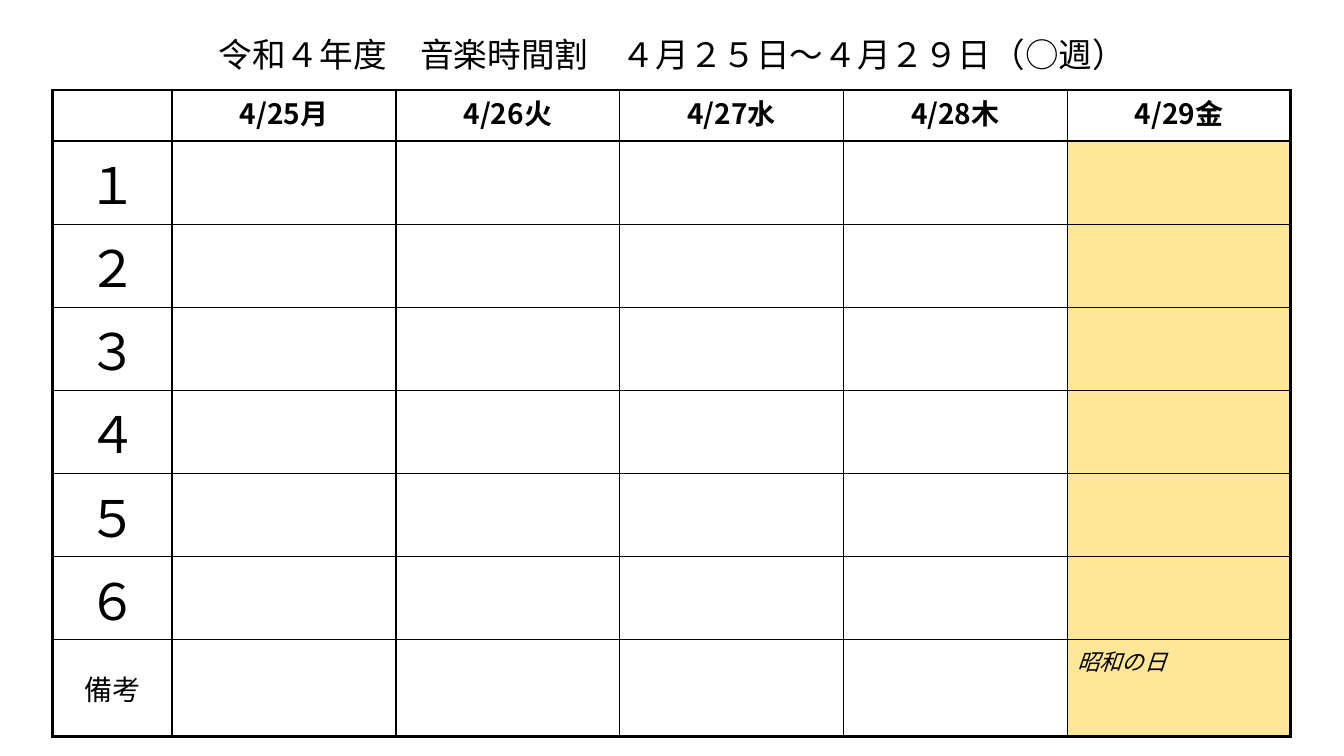
import lxml.etree
import pptx
import pptx.dml.color
import pptx.enum.text
import pptx.oxml.ns
import pptx.util

Pt = pptx.util.Pt
ALIGN = pptx.enum.text.PP_ALIGN
ANCHOR = pptx.enum.text.MSO_ANCHOR

FONT = "Noto Sans CJK JP"
BLACK = "000000"
HOLIDAY = "FFE699"
THIN, MEDIUM, THICK = 1, 1.5, 2.25

TITLE = "令和４年度　音楽時間割　４月２５日〜４月２９日（○週）"
DAYS = ["4/25月", "4/26火", "4/27水", "4/28木", "4/29金"]
PERIODS = ["１", "２", "３", "４", "５", "６"]
COLUMN_WIDTHS = [85.5] + [159.8] * len(DAYS)
ROW_HEIGHTS = [36.8] + [57.6] * len(PERIODS) + [69.2]
# Line weights from the outer left edge to the right, and from top to bottom
VERTICAL_LINES = [THICK, MEDIUM] + [THIN] * (len(DAYS) - 1) + [THICK]
HORIZONTAL_LINES = [THICK, MEDIUM] + [THIN] * (len(PERIODS) - 1) + [MEDIUM, THICK]


def colour(code):
    return pptx.dml.color.RGBColor.from_string(code)


def add_xml(parent, tag, **attributes):
    return lxml.etree.SubElement(parent, pptx.oxml.ns.qn(tag), attributes)


def write_text(frame, text, size, align=ALIGN.CENTER, bold=False, italic=False, spacing=None):
    para = frame.paragraphs[0]
    para.alignment = align
    if spacing is not None:
        para.line_spacing = spacing
    span = para.add_run()
    span.text = text
    font = span.font
    font.size, font.bold, font.italic = Pt(size), bold, italic
    font.color.rgb = colour(BLACK)
    font.name = FONT
    add_xml(span._r.get_or_add_rPr(), "a:ea", typeface=FONT)


def format_title(page):
    box = page.shapes.title
    box.left, box.top, box.width, box.height = Pt(14.4), Pt(21.6), Pt(931.7), Pt(35.3)
    frame = box.text_frame
    frame.auto_size = pptx.enum.text.MSO_AUTO_SIZE.NONE
    frame.vertical_anchor = ANCHOR.BOTTOM
    write_text(frame, TITLE, 24, spacing=0.9)


def draw_borders(cell, left, right, top, bottom):
    properties = cell._tc.get_or_add_tcPr()
    for side, weight in zip("LRTB", (left, right, top, bottom)):
        line = add_xml(properties, f"a:ln{side}", w=str(int(Pt(weight))))
        add_xml(add_xml(line, "a:solidFill"), "a:srgbClr", val=BLACK)


def add_grid(page):
    """Add the empty timetable with its borders and the shaded holiday column."""
    frame = page.shapes.add_table(
        len(ROW_HEIGHTS), len(COLUMN_WIDTHS),
        Pt(37.6), Pt(64.2), Pt(sum(COLUMN_WIDTHS)), Pt(sum(ROW_HEIGHTS)))
    table = frame.table
    table.first_row = table.horz_banding = False
    for column, width in zip(table.columns, COLUMN_WIDTHS):
        column.width = Pt(width)
    for r, height in enumerate(ROW_HEIGHTS):
        table.rows[r].height = Pt(height)
        for c in range(len(COLUMN_WIDTHS)):
            cell = table.cell(r, c)
            draw_borders(cell, *VERTICAL_LINES[c:c + 2], *HORIZONTAL_LINES[r:r + 2])
            if r > 0 and c == len(DAYS):
                cell.fill.solid()
                cell.fill.fore_color.rgb = colour(HOLIDAY)
            else:
                cell.fill.background()
    return table


def label_cell(cell, text, size, **text_format):
    cell.vertical_anchor = ANCHOR.MIDDLE
    write_text(cell.text_frame, text, size, **text_format)


def main():
    deck = pptx.Presentation()
    deck.slide_width, deck.slide_height = Pt(960), Pt(540)
    page = deck.slides.add_slide(deck.slide_layouts[5])
    format_title(page)

    table = add_grid(page)
    for c, day in enumerate(DAYS, start=1):
        label_cell(table.cell(0, c), day, 20, bold=True, spacing=Pt(24))
    for r, period in enumerate(PERIODS, start=1):
        label_cell(table.cell(r, 0), period, 36)
    notes_row = len(PERIODS) + 1
    label_cell(table.cell(notes_row, 0), "備考", 20)
    holiday = table.cell(notes_row, len(DAYS))
    write_text(holiday.text_frame, "昭和の日", 16, align=ALIGN.LEFT, italic=True)

    deck.save("out.pptx")


if __name__ == "__main__":
    main()
